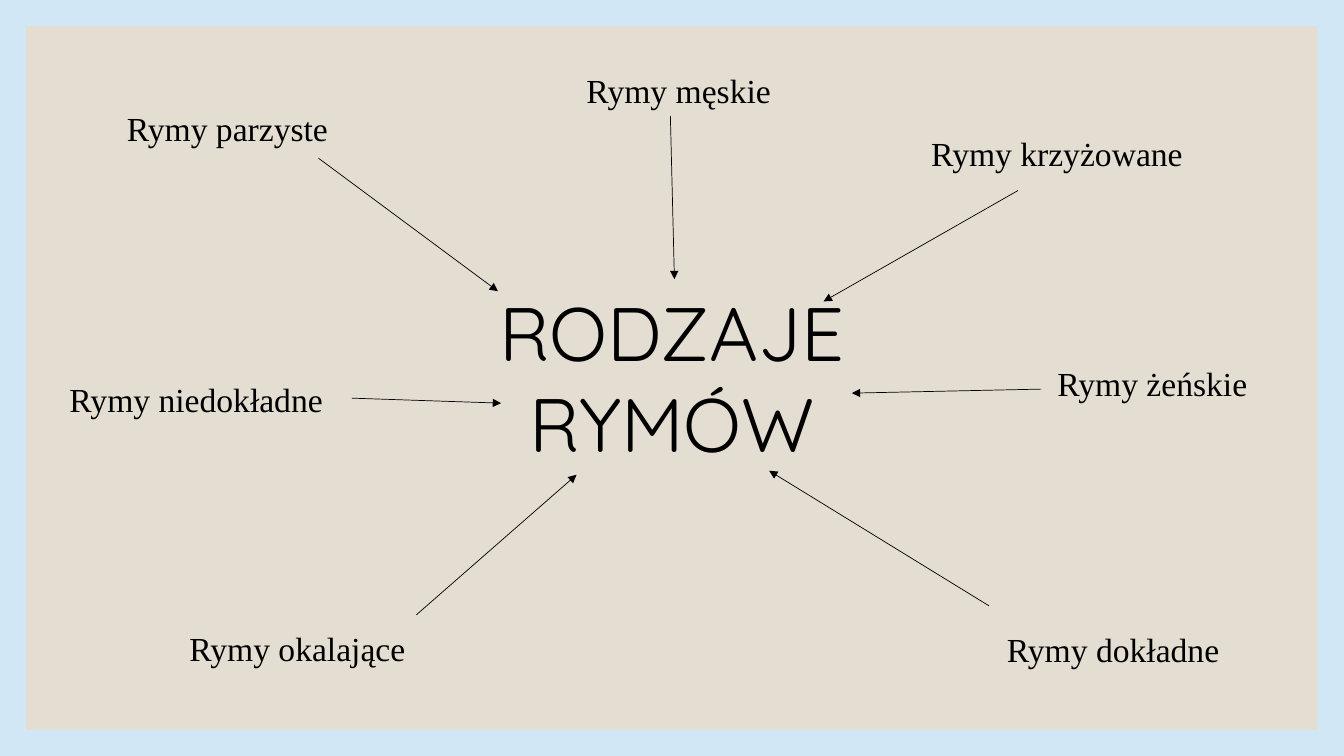
from dataclasses import dataclass

from lxml.etree import SubElement
from pptx import Presentation
from pptx.dml.color import RGBColor
from pptx.enum.shapes import MSO_CONNECTOR, MSO_SHAPE
from pptx.enum.text import MSO_ANCHOR, MSO_AUTO_SIZE, PP_ALIGN
from pptx.oxml.ns import qn
from pptx.util import Inches, Pt


@dataclass(frozen=True)
class Theme:
    """Colours, fonts and type sizes of the slide."""
    border: RGBColor = RGBColor(0xD1, 0xE7, 0xF6)
    panel: RGBColor = RGBColor(0xE3, 0xDE, 0xD1)
    ink: RGBColor = RGBColor(0, 0, 0)
    title_font: str = "Quicksand"
    label_font: str = "Times New Roman"
    title_size: Pt = Pt(54)
    label_size: Pt = Pt(24)
    arrow_width: Pt = Pt(0.5)


THEME = Theme()
SLIDE_WIDTH, SLIDE_HEIGHT = Inches(13.33), Inches(7.5)
MARGIN = Inches(0.26)
LABEL_ROWS = 6.67

# Each rhyme: name, label (column, row, width), arrow start, arrow end
RHYMES = [
    ("Rymy parzyste", (8.7, 13.6, 24), (23.7, 20.93), (37.05, 38.53)),
    ("Rymy męskie", (42.9, 8.53, 28.58), (49.88, 15.33), (50.18, 36.93)),
    ("Rymy krzyżowane", (68.55, 16.93, 31.45), (75.75, 25.2), (61.28, 39.87)),
    ("Rymy żeńskie", (77.93, 47.33, 17.7), (77.48, 51.47), (63.38, 52)),
    ("Rymy dokładne", (74.18, 82.53, 25.82), (73.58, 80.13), (57.23, 62.27)),
    ("Rymy okalające", (13.35, 82.4, 32.85), (30.98, 81.33), (42.9, 62.8)),
    ("Rymy niedokładne", (4.43, 49.47, 26.7), (26.18, 52.67), (37.28, 53.33)),
]


def columns(count):
    """Turn hundredths of the slide width into a length."""
    return round(SLIDE_WIDTH * count / 100)


def rows(count):
    """Turn hundredths of the slide height into a length."""
    return round(SLIDE_HEIGHT * count / 100)


def write(frame, wording, font, size, align):
    """Write one formatted run into a text frame."""
    frame.word_wrap = True
    paragraph = frame.paragraphs[0]
    paragraph.alignment = align
    run = paragraph.add_run()
    run.text = wording
    run.font.name = font
    run.font.size = size
    run.font.color.rgb = THEME.ink


def add_title(slide, wording):
    """Move the title placeholder to the centre and fill it."""
    title = slide.shapes.title
    title.left, title.top = columns(32.7), rows(37.2)
    title.width, title.height = columns(34.65), rows(25.6)
    title.text_frame.auto_size = MSO_AUTO_SIZE.NONE
    title.text_frame.vertical_anchor = MSO_ANCHOR.TOP
    write(title.text_frame, wording, THEME.title_font, THEME.title_size, PP_ALIGN.CENTER)


def add_panel(slide):
    """Lay the inner panel behind the title, an equal margin from each edge."""
    panel = slide.shapes.add_shape(
        MSO_SHAPE.RECTANGLE, MARGIN, MARGIN,
        SLIDE_WIDTH - 2 * MARGIN, SLIDE_HEIGHT - 2 * MARGIN)
    panel.shadow.inherit = False
    panel.fill.solid()
    panel.fill.fore_color.rgb = THEME.panel
    panel.line.fill.background()
    slide.shapes.title.element.addprevious(panel.element)


def add_label(slide, wording, column, row, width):
    """Add the name of one kind of rhyme."""
    label = slide.shapes.add_textbox(
        columns(column), rows(row), columns(width), rows(LABEL_ROWS))
    write(label.text_frame, wording, THEME.label_font, THEME.label_size, PP_ALIGN.LEFT)


def add_arrow(slide, start, end):
    """Draw a thin arrow between two grid points."""
    arrow = slide.shapes.add_connector(
        MSO_CONNECTOR.STRAIGHT,
        columns(start[0]), rows(start[1]), columns(end[0]), rows(end[1]))
    arrow.line.color.rgb = THEME.ink
    arrow.line.width = THEME.arrow_width
    SubElement(arrow.line._get_or_add_ln(), qn("a:tailEnd"), type="triangle")
    SubElement(arrow.element.spPr, qn("a:effectLst"))


def main():
    """Build the slide and save it."""
    deck = Presentation()
    deck.slide_width, deck.slide_height = SLIDE_WIDTH, SLIDE_HEIGHT
    slide = deck.slides.add_slide(deck.slide_layouts.get_by_name("Title Only"))
    slide.background.fill.solid()
    slide.background.fill.fore_color.rgb = THEME.border
    add_panel(slide)
    add_title(slide, "RODZAJE RYMÓW")
    for wording, place, start, end in RHYMES:
        add_arrow(slide, start, end)
        add_label(slide, wording, *place)
    deck.save("out.pptx")


if __name__ == "__main__":
    main()
